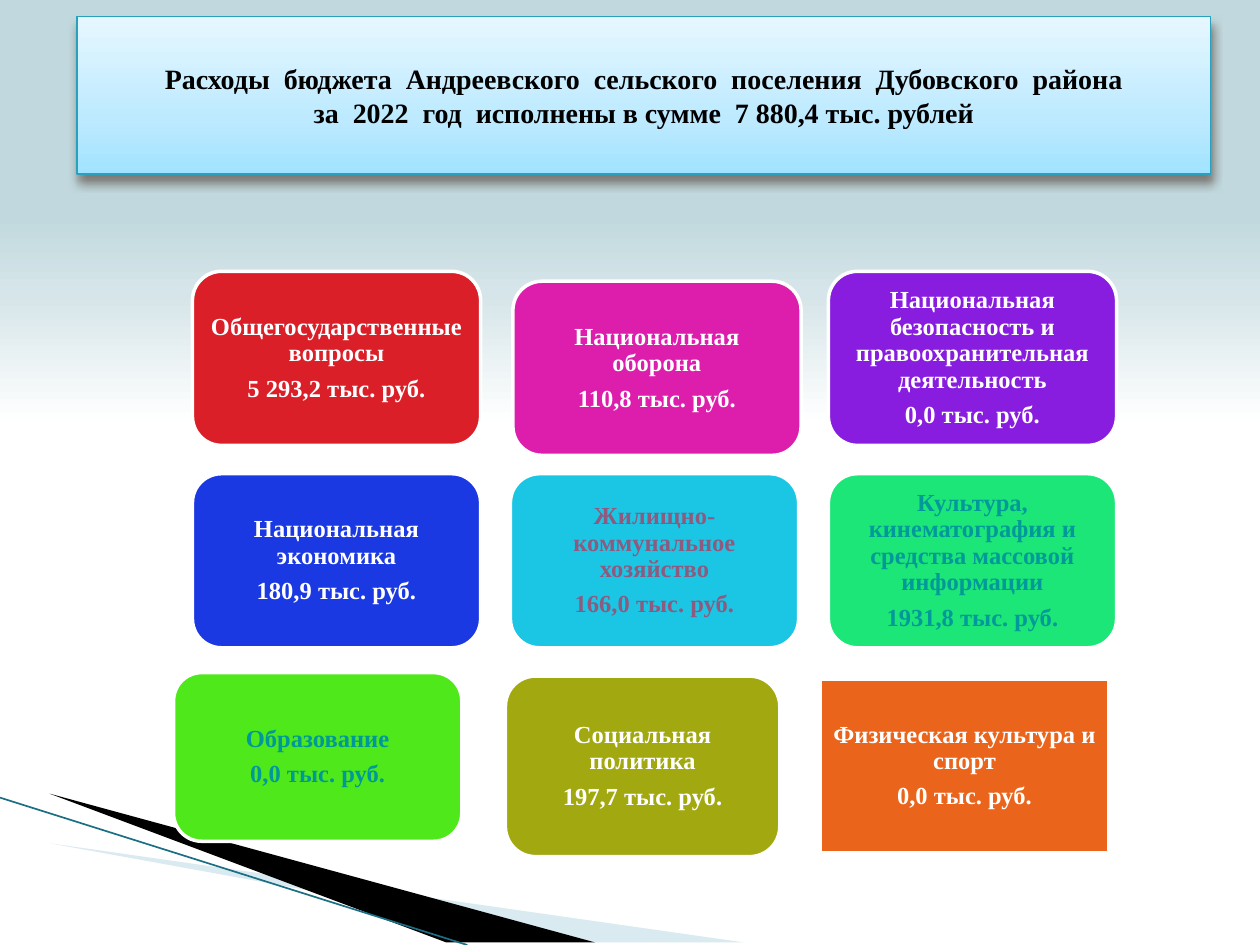
from lxml.etree import SubElement
from pptx import Presentation
from pptx.dml.color import RGBColor
from pptx.enum.shapes import MSO_CONNECTOR as Connector, MSO_SHAPE as Shape
from pptx.enum.text import MSO_ANCHOR as Anchor, PP_ALIGN as Align
from pptx.oxml.ns import qn
from pptx.util import Cm, Pt

COLORS = {
    "white": "FFFFFF", "black": "000000", "teal": "009999", "mauve": "8D5B7F",
    "sky": "C1D9DE", "sky_fade": "D6E5E9",
    "title_top": "E6F7FF", "title_middle": "BDEAFF", "title_bottom": "A1E3FF",
    "title_line": "28A1BE", "title_shadow": "4E3B30",
    "wedge": "A0CBDC", "edge": "1B6E84",
    "red": "DA1F28", "pink": "DD1EAD", "violet": "881DE0",
    "blue": "1B39E2", "cyan": "1BC6E5", "mint": "1BE677",
    "green": "4EE81B", "olive": "A1A810", "orange": "EB641B",
}
FONT = "Times New Roman"
TITLE = ("Расходы  бюджета  Андреевского  сельского  поселения  Дубовского  района\v"
         "за  2022  год  исполнены в сумме  7 880,4 тыс. рублей")

GRID_LEFT, GRID_TOP = 3.88, 5.47
STEP_X, STEP_Y = 6.41, 4.08
CARD_SIZE = (5.81, 3.51)
ROUNDED = Shape.FLOWCHART_ALTERNATE_PROCESS

EXPENSES = [
    ("Общегосударственные вопросы", "5 293,2", "red", {}),
    ("Национальная оборона", "110,8", "pink", {"nudge": (0.05, 0.2)}),
    ("Национальная безопасность и правоохранительная деятельность", "0,0", "violet", {}),
    ("Национальная экономика", "180,9", "blue", {}),
    ("Жилищно-коммунальное хозяйство", "166,0", "cyan", {"ink": "mauve"}),
    ("Культура, кинематография и средства массовой информации", "1931,8", "mint",
     {"ink": "teal"}),
    ("Образование", "0,0", "green",
     {"ink": "teal", "nudge": (-0.38, -0.07), "size": (5.81, 3.4),
      "outline": Shape.ROUNDED_RECTANGLE}),
    ("Социальная политика", "197,7", "olive", {"nudge": (-0.1, 0), "size": (5.53, 3.64)}),
    ("Физическая культура и спорт", "0,0", "orange",
     {"nudge": (-0.16, 0.06), "outline": Shape.RECTANGLE}),
]


def rgb(name):
    return RGBColor.from_string(COLORS[name])


def add_color(parent, name, alpha=100):
    color = SubElement(parent, qn("a:srgbClr"), val=COLORS[name])
    if alpha < 100:
        SubElement(color, qn("a:alpha"), val=str(alpha * 1000))


def fill_downward(fill, owner, stops):
    fill.gradient()
    fill.gradient_angle = 270
    stop_list = owner.find(".//" + qn("a:gsLst"))
    for stop in list(stop_list):
        stop_list.remove(stop)
    for position, name in stops:
        add_color(SubElement(stop_list, qn("a:gs"), pos=str(position * 1000)), name)


def write(frame, paragraphs, size, color, spacing=None, after=None, margin=None):
    frame.word_wrap = True
    frame.vertical_anchor = Anchor.MIDDLE
    if margin is not None:
        frame.margin_left = frame.margin_right = Cm(margin)
        frame.margin_top = frame.margin_bottom = Cm(margin)
    frame.text = "\n".join(paragraphs)
    for paragraph in frame.paragraphs:
        paragraph.alignment = Align.CENTER
        paragraph.line_spacing = spacing
        paragraph.space_after = after
        for run in paragraph.runs:
            run.font.name = FONT
            run.font.size = Pt(size)
            run.font.bold = True
            run.font.color.rgb = rgb(color)


def add_wedge(slide, points, color, alpha=100):
    builder = slide.shapes.build_freeform(*points[0], scale=Cm(1))
    builder.add_line_segments(points[1:], close=True)
    wedge = builder.convert_to_shape()
    wedge.shadow.inherit = False
    wedge.line.fill.background()
    wedge.fill.solid()
    wedge.fill.fore_color.rgb = rgb(color)
    if alpha < 100:
        tint = wedge._element.spPr.find(".//" + qn("a:srgbClr"))
        SubElement(tint, qn("a:alpha"), val=str(alpha * 1000))


def add_edge(slide, start, end):
    edge = slide.shapes.add_connector(
        Connector.STRAIGHT, *(Cm(value) for value in start + end))
    edge.line.color.rgb = rgb("edge")
    edge.line.width = Pt(0.95)
    SubElement(edge._element.spPr, qn("a:effectLst"))


def format_title(title):
    title.left, title.top = Cm(1.55), Cm(0.33)
    title.width, title.height = Cm(22.86), Cm(3.18)
    fill_downward(title.fill, title._element.spPr,
                  [(0, "title_top"), (65, "title_middle"), (100, "title_bottom")])
    title.line.color.rgb = rgb("title_line")
    title.line.width = Pt(0.75)
    title.shadow.inherit = False
    effects = title._element.spPr.find(qn("a:effectLst"))
    shadow = SubElement(effects, qn("a:outerShdw"), blurRad=str(Pt(6)),
                        dist=str(Pt(4)), dir="5400000", rotWithShape="0")
    add_color(shadow, "title_shadow", alpha=60)
    write(title.text_frame, [TITLE], size=16, color="black")


def add_card(slide, index, name, amount, color, ink="white", nudge=(0, 0),
             size=CARD_SIZE, outline=ROUNDED):
    row, column = divmod(index, 3)
    left = GRID_LEFT + column * STEP_X + nudge[0]
    top = GRID_TOP + row * STEP_Y + nudge[1]
    card = slide.shapes.add_shape(outline, Cm(left), Cm(top), Cm(size[0]), Cm(size[1]))
    card.shadow.inherit = False
    card.fill.solid()
    card.fill.fore_color.rgb = rgb(color)
    card.line.color.rgb = rgb("white")
    card.line.width = Pt(2)
    write(card.text_frame, [name, f"{amount} тыс. руб."], size=14, color=ink,
          spacing=0.9, after=Pt(5), margin=0.15)


def main():
    deck = Presentation()
    deck.slide_width, deck.slide_height = Cm(25.4), Cm(19.05)
    slide = deck.slides.add_slide(deck.slide_layouts[5])
    fill_downward(slide.background.fill, slide._element,
                  [(0, "sky"), (23, "sky"), (31, "sky_fade"), (45, "white"), (100, "white")])
    add_wedge(slide, [(1.4, 16.52), (15.1, 19.05), (11.58, 19.05)], "wedge", alpha=40)
    add_wedge(slide, [(1.35, 16.48), (11.6, 19.05), (9.45, 19.05)], "black")
    add_edge(slide, (0, 16.08), (9.42, 19.05))
    format_title(slide.shapes.title)
    for index, (name, amount, color, style) in enumerate(EXPENSES):
        add_card(slide, index, name, amount, color, **style)
    deck.save("out.pptx")


if __name__ == "__main__":
    main()
